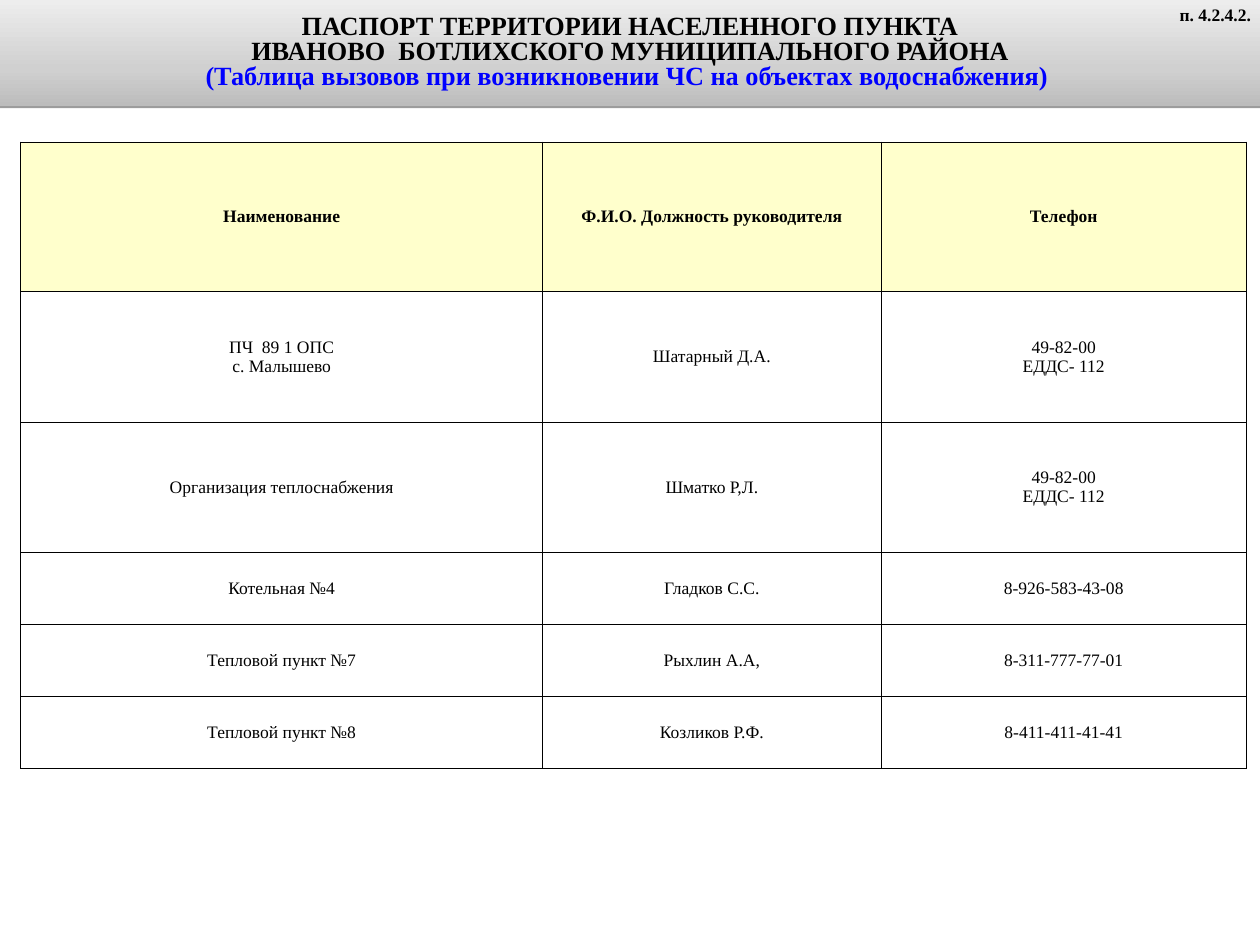
"""Build the emergency call table slide for water supply facilities."""
import lxml.etree
import pptx
import pptx.dml.color
import pptx.enum.shapes
import pptx.enum.text
import pptx.oxml
import pptx.oxml.ns
import pptx.util

Inches = pptx.util.Inches
Pt = pptx.util.Pt
RGBColor = pptx.dml.color.RGBColor
ALIGN = pptx.enum.text.PP_ALIGN
MIDDLE = pptx.enum.text.MSO_ANCHOR.MIDDLE
NS = pptx.oxml.ns.nsdecls("a")

FONT = "Times New Roman"
BLACK = RGBColor(0x00, 0x00, 0x00)
BLUE = RGBColor(0x00, 0x00, 0xFF)
WHITE = RGBColor(0xFF, 0xFF, 0xFF)
CREAM = RGBColor(0xFF, 0xFF, 0xCC)
BAND_STOPS = [
    (0, RGBColor(0xBC, 0xBC, 0xBC)),
    (35, RGBColor(0xD0, 0xD0, 0xD0)),
    (100, RGBColor(0xED, 0xED, 0xED)),
]

TITLE = [
    ("ПАСПОРТ ТЕРРИТОРИИ НАСЕЛЕННОГО ПУНКТА", BLACK),
    ("ИВАНОВО  БОТЛИХСКОГО МУНИЦИПАЛЬНОГО РАЙОНА", BLACK),
    ("(Таблица вызовов при возникновении ЧС на объектах водоснабжения) ", BLUE),
]
DUTY_PHONES = ["49-82-00", "ЕДДС- 112"]
ROWS = [
    (["Наименование"], ["Ф.И.О. Должность руководителя"], ["Телефон"]),
    (["ПЧ  89 1 ОПС", "с. Малышево"], ["Шатарный Д.А."], DUTY_PHONES),
    (["Организация теплоснабжения"], ["Шматко Р,Л."], DUTY_PHONES),
    (["Котельная №4"], ["Гладков С.С."], ["8-926-583-43-08"]),
    (["Тепловой пункт №7"], ["Рыхлин А.А,"], ["8-311-777-77-01"]),
    (["Тепловой пункт №8"], ["Козликов Р.Ф."], ["8-411-411-41-41"]),
]
COL_WIDTHS = [5.8, 3.76, 4.06]
ROW_HEIGHTS = [1.66, 1.45, 1.45, 0.8, 0.8, 0.8]


def write_lines(tf, lines, size, bold, align=ALIGN.CENTER, spacing=None):
    """Write (text, colour) pairs as one paragraph each."""
    for i, (text, color) in enumerate(lines):
        p = tf.add_paragraph() if i else tf.paragraphs[0]
        p.alignment = align
        p.line_spacing = spacing
        r = p.add_run()
        r.text = text
        r.font.name = FONT
        r.font.size = Pt(size)
        r.font.bold = bold
        r.font.color.rgb = color


def add_title_band(slide):
    """Add the grey gradient band holding the title."""
    sp = slide.shapes.add_shape(
        pptx.enum.shapes.MSO_SHAPE.RECTANGLE, 0, 0, Inches(14), Inches(1.18))
    stops = "".join(
        f'<a:gs pos="{pos * 1000}"><a:srgbClr val="{color}"/></a:gs>'
        for pos, color in BAND_STOPS)
    spPr = sp.element.spPr
    spPr.append(pptx.oxml.parse_xml(
        f'<a:gradFill {NS} rotWithShape="1"><a:gsLst>{stops}</a:gsLst>'
        '<a:lin ang="16200000" scaled="0"/></a:gradFill>'))
    sp.line.fill.background()
    spPr.append(pptx.oxml.parse_xml(
        f'<a:effectLst {NS}><a:outerShdw blurRad="0" dist="{Pt(1.6)}" dir="5400000" '
        f'rotWithShape="0"><a:srgbClr val="{BLACK}"><a:alpha val="38000"/>'
        '</a:srgbClr></a:outerShdw></a:effectLst>'))
    tf = sp.text_frame
    tf.word_wrap = True
    tf.vertical_anchor = MIDDLE
    write_lines(tf, TITLE, 21, True, spacing=0.8)


def add_borders(cell):
    """Give the cell a thin black border on all four sides."""
    tcPr = cell._tc.get_or_add_tcPr()
    for side in ("lnL", "lnR", "lnT", "lnB"):
        ln = lxml.etree.SubElement(tcPr, pptx.oxml.ns.qn(f"a:{side}"), w=str(Pt(1)))
        fill = lxml.etree.SubElement(ln, pptx.oxml.ns.qn("a:solidFill"))
        lxml.etree.SubElement(fill, pptx.oxml.ns.qn("a:srgbClr"), val=str(BLACK))


def fill_cell(cell, lines, header):
    """Style one table cell and write its lines."""
    add_borders(cell)
    cell.fill.solid()
    cell.fill.fore_color.rgb = CREAM if header else WHITE
    cell.vertical_anchor = MIDDLE
    cell.margin_left = cell.margin_right = Inches(0.03)
    cell.margin_top = cell.margin_bottom = Inches(0.03)
    write_lines(cell.text_frame, [(line, BLACK) for line in lines], 14, header)


def add_call_table(slide):
    """Add the table of facilities, heads and phones."""
    table = slide.shapes.add_table(
        len(ROWS), len(COL_WIDTHS), Inches(0.23), Inches(1.58),
        Inches(sum(COL_WIDTHS)), Inches(sum(ROW_HEIGHTS))).table
    for column, width in zip(table.columns, COL_WIDTHS):
        column.width = Inches(width)
    for i, (row, height) in enumerate(zip(ROWS, ROW_HEIGHTS)):
        table.rows[i].height = Inches(height)
        for j, lines in enumerate(row):
            fill_cell(table.cell(i, j), lines, i == 0)


def add_section_number(slide):
    """Add the section number in the top right corner."""
    sp = slide.shapes.add_textbox(Inches(12.91), 0, Inches(1.09), Inches(0.33))
    tf = sp.text_frame
    tf.word_wrap = True
    tf.auto_size = pptx.enum.text.MSO_AUTO_SIZE.SHAPE_TO_FIT_TEXT
    write_lines(tf, [("п. 4.2.4.2.", BLACK)], 14, True, ALIGN.RIGHT)


def main():
    """Create the slide and save it."""
    prs = pptx.Presentation()
    prs.slide_width = Inches(14)
    prs.slide_height = Inches(10.5)
    slide = prs.slides.add_slide(prs.slide_layouts[6])
    add_title_band(slide)
    add_call_table(slide)
    add_section_number(slide)
    prs.save("out.pptx")


if __name__ == "__main__":
    main()
